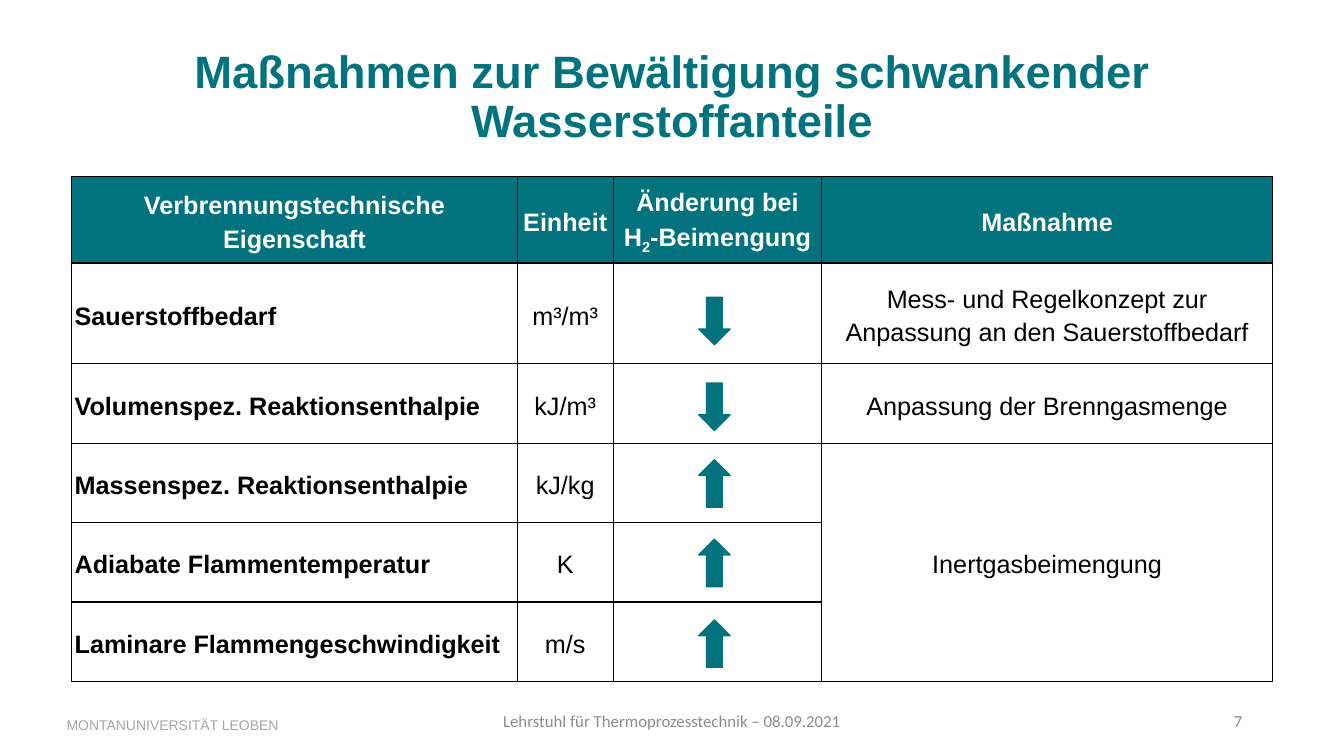
from dataclasses import dataclass

from lxml.etree import SubElement
from pptx import Presentation
from pptx.dml.color import RGBColor
from pptx.enum.shapes import MSO_SHAPE as Preset
from pptx.enum.text import MSO_ANCHOR as Anchor, MSO_AUTO_SIZE as AutoSize, PP_ALIGN as Align
from pptx.oxml.ns import qn
from pptx.util import Inches, Pt


@dataclass(frozen=True)
class Theme:
    teal: str = "00737E"
    black: str = "000000"
    white: str = "FFFFFF"
    grey: str = "8C8C8C"
    pale: str = "A6A6A6"
    heading: str = "Arial"
    footing: str = "Calibri"
    title_size: float = 32.4
    table_size: float = 18
    footer_size: float = 12
    brand_size: float = 10


class Deck:
    def __init__(self, theme):
        self.theme = theme
        self.show = Presentation()
        self.show.slide_width = Inches(13.33)
        self.show.slide_height = Inches(7.5)
        self.slide = self.show.slides.add_slide(self.show.slide_layouts[5])

    def across(self, percent):
        return round(self.show.slide_width * percent / 100)

    def down(self, percent):
        return round(self.show.slide_height * percent / 100)

    def area(self, left, top, width, height):
        return self.across(left), self.down(top), self.across(width), self.down(height)

    def add_words(self, paragraph, text, size, color, face, bold=False):
        run = paragraph.add_run()
        run.text = text
        run.font.size = Pt(size)
        run.font.name = face
        run.font.bold = bold
        run.font.color.rgb = RGBColor.from_string(color)
        return run

    def title(self, text, place):
        heading = self.slide.shapes.title
        heading.left, heading.top, heading.width, heading.height = self.area(*place)
        frame = heading.text_frame
        frame.word_wrap = True
        frame.auto_size = AutoSize.NONE
        frame.vertical_anchor = Anchor.MIDDLE
        line = frame.paragraphs[0]
        line.alignment = Align.CENTER
        line.line_spacing = 0.9
        self.add_words(line, text, self.theme.title_size, self.theme.teal,
                       self.theme.heading, True)

    def footer(self, text, place, align, size, color, face, anchor=Anchor.MIDDLE):
        frame = self.slide.shapes.add_textbox(*self.area(*place)).text_frame
        frame.word_wrap = True
        frame.vertical_anchor = anchor
        line = frame.paragraphs[0]
        line.alignment = align
        self.add_words(line, text, size, color, face)

    def table(self, place, widths, heights):
        grid = self.slide.shapes.add_table(
            len(heights), len(widths), *self.area(*place)).table
        grid.horz_banding = False
        for column, width in zip(grid.columns, widths):
            column.width = self.across(width)
        for row, height in zip(grid.rows, heights):
            row.height = self.down(height)
        for cell in grid.iter_cells():
            self.outline(cell)
            cell.fill.background()
        return grid

    def outline(self, cell):
        properties = cell._tc.get_or_add_tcPr()
        for side in ("lnL", "lnR", "lnT", "lnB"):
            edge = SubElement(properties, qn(f"a:{side}"), w=str(Pt(1)))
            paint = SubElement(edge, qn("a:solidFill"))
            SubElement(paint, qn("a:srgbClr"), val=self.theme.black)

    def cell(self, cell, parts, align=Align.CENTER, bold=False, header=False):
        cell.margin_left = cell.margin_right = Inches(0.03)
        cell.margin_top = cell.margin_bottom = 0
        cell.vertical_anchor = Anchor.MIDDLE
        if header:
            cell.fill.solid()
            cell.fill.fore_color.rgb = RGBColor.from_string(self.theme.teal)
        color = self.theme.white if header else self.theme.black
        line = cell.text_frame.paragraphs[0]
        line.alignment = align
        line.line_spacing = 1.2
        for position, text in enumerate(parts):
            run = self.add_words(line, text, self.theme.table_size, color,
                                 self.theme.heading, bold or header)
            if position % 2:
                run._r.get_or_add_rPr().set("baseline", "-25000")

    def arrow(self, place, rising):
        arrow = self.slide.shapes.add_shape(Preset.DOWN_ARROW, *self.area(*place))
        arrow.shadow.inherit = False
        arrow.rotation = 180 if rising else 0
        arrow.fill.solid()
        arrow.fill.fore_color.rgb = RGBColor.from_string(self.theme.teal)
        arrow.line.color.rgb = RGBColor.from_string(self.theme.teal)
        arrow.line.width = Pt(1)


HEADERS = [
    ["Verbrennungstechnische Eigenschaft"],
    ["Einheit"],
    ["Änderung bei H", "2", "-Beimengung"],
    ["Maßnahme"],
]
PROPERTIES = [
    ("Sauerstoffbedarf", "m³/m³", False, 39.33),
    ("Volumenspez. Reaktionsenthalpie", "kJ/m³", False, 50.67),
    ("Massenspez. Reaktionsenthalpie", "kJ/kg", True, 60.8),
    ("Adiabate Flammentemperatur", "K", True, 71.33),
    ("Laminare Flammengeschwindigkeit", "m/s", True, 82),
]
MEASURES = [
    "Mess- und Regelkonzept zur Anpassung an den Sauerstoffbedarf",
    "Anpassung der Brenngasmenge",
    "Inertgasbeimengung",
]


def main():
    theme = Theme()
    deck = Deck(theme)
    deck.title("Maßnahmen zur Bewältigung schwankender Wasserstoffanteile",
               (2.7, 5.33, 94.6, 15.47))

    grid = deck.table((5.33, 23.33, 89.35, 66.8),
                      [33.16, 7.13, 15.53, 33.53],
                      [11.47, 13.33] + [10.5] * 4)
    for column, parts in enumerate(HEADERS):
        deck.cell(grid.cell(0, column), parts, header=True)
    grid.cell(3, 3).merge(grid.cell(5, 3))
    for row, measure in enumerate(MEASURES, 1):
        deck.cell(grid.cell(row, 3), [measure])
    for row, (label, unit, rising, top) in enumerate(PROPERTIES, 1):
        deck.cell(grid.cell(row, 0), [label], Align.LEFT, bold=True)
        deck.cell(grid.cell(row, 1), [unit])
        deck.arrow((51.99, top, 2.33, 6.27), rising)

    deck.footer("MONTANUNIVERSITÄT LEOBEN", (3.6, 94.13, 17.85, 3.6), Align.RIGHT,
                theme.brand_size, theme.pale, theme.heading, Anchor.TOP)
    deck.footer("Lehrstuhl für Thermoprozesstechnik – 08.09.2021",
                (35.18, 92.67, 29.63, 5.33), Align.CENTER,
                theme.footer_size, theme.grey, theme.footing)
    deck.footer("7", (70.67, 92.67, 22.51, 5.33), Align.RIGHT,
                theme.footer_size, theme.grey, theme.footing)
    deck.show.save("out.pptx")


if __name__ == "__main__":
    main()
